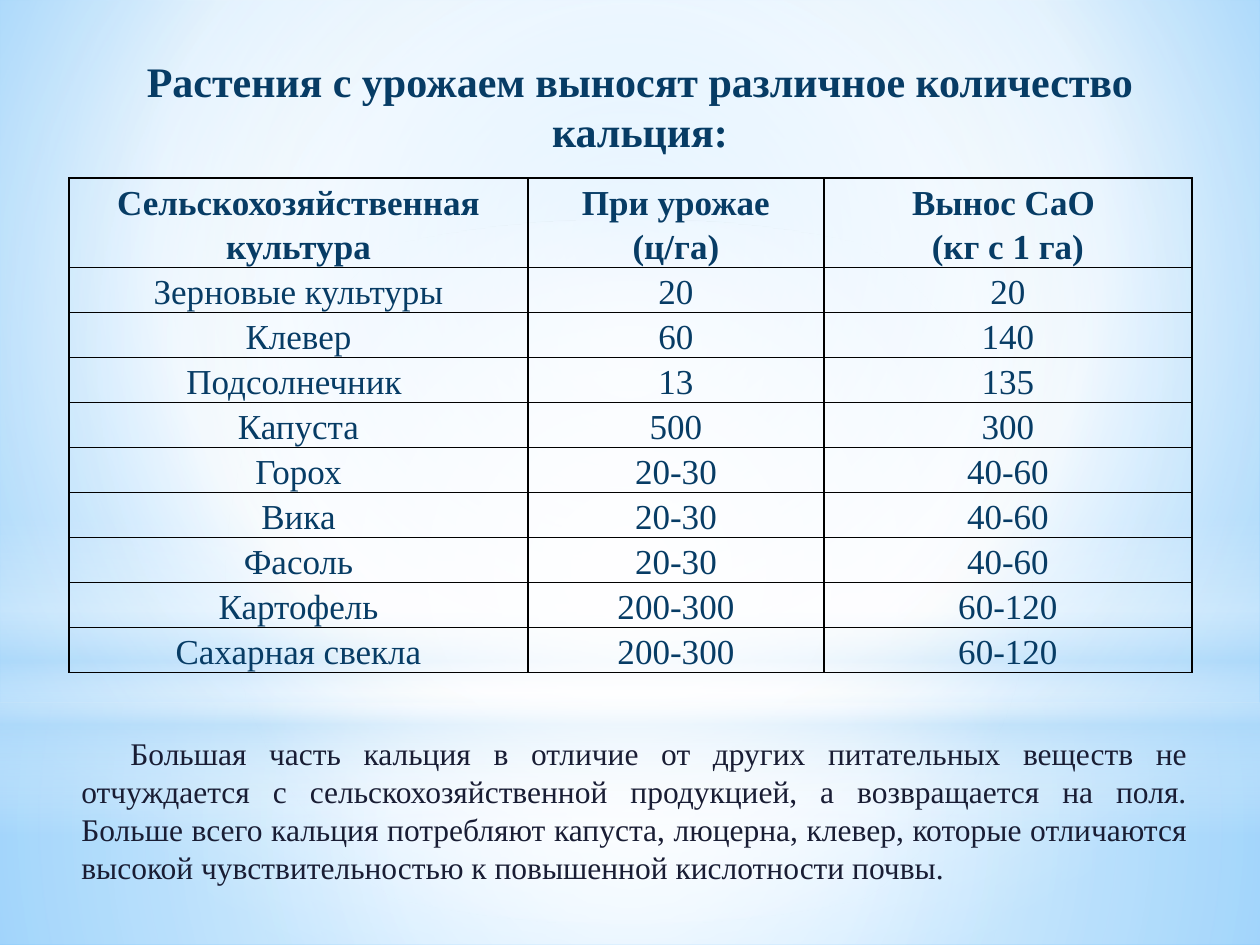
"""Build a slide on how much calcium different crops remove from the soil."""
from dataclasses import dataclass

from lxml import etree
from pptx import Presentation
from pptx import util as u
from pptx.dml.color import RGBColor
from pptx.enum import shapes, text
from pptx.oxml import parse_xml
from pptx.oxml.ns import nsdecls, qn

SCALE = 914400 / 126
FONT = "Times New Roman"
NAVY = RGBColor(0x07, 0x3C, 0x65)
INK = RGBColor(0x19, 0x1D, 0x34)
BLACK = RGBColor(0, 0, 0)
WHITE = RGBColor(255, 255, 255)
PALE = RGBColor(0xB4, 0xDC, 0xFA)
SKY = RGBColor(0x9E, 0xD5, 0xFF)
BLUE = RGBColor(0x5B, 0xB9, 0xFF)

Stop = tuple[int, RGBColor, int]
CENTRE = (50, 50, 50, 50)


@dataclass
class Wash:
    kind: shapes.MSO_SHAPE
    box: tuple[int, int, int, int]
    stops: list[Stop]
    focus: tuple[int, int, int, int] | None = CENTRE


RECT, OVAL = shapes.MSO_SHAPE.RECTANGLE, shapes.MSO_SHAPE.OVAL
SKY_STOPS = [(0, SKY, 100), (60, WHITE, 100), (100, BLUE, 100)]
WASHES = [
    Wash(RECT, (0, 703, 1260, 242),
         [(0, WHITE, 91), (37, WHITE, 76), (100, PALE, 79)]),
    Wash(RECT, (0, 0, 1260, 703),
         [(0, WHITE, 89), (48, WHITE, 62), (100, PALE, 79)]),
    Wash(RECT, (0, 519, 1260, 315),
         [(0, WHITE, 0), (29, WHITE, 30), (45, PALE, 40),
          (55, WHITE, 26), (65, PALE, 60), (100, WHITE, 0)], None),
    Wash(OVAL, (0, 220, 1260, 703), [(0, WHITE, 100), (56, WHITE, 0)]),
]

TITLE = "Растения с урожаем выносят различное количество кальция:"
NOTE = (
    "Большая часть кальция в отличие от других питательных веществ не "
    "отчуждается с сельскохозяйственной продукцией, а возвращается на поля. "
    "Больше всего кальция потребляют капуста, люцерна, клевер, которые "
    "отличаются высокой чувствительностью к повышенной кислотности почвы."
)
COLS = (459, 296, 368)
ROW = 45
CROPS = [
    ("Сельскохозяйственная культура", "При урожае (ц/га)",
     "Вынос CaO \n(кг с 1 га)"),
    ("Зерновые культуры", "20", "20"),
    ("Клевер", "60", "140"),
    ("Подсолнечник ", "13", "135"),
    ("Капуста", "500", "300"),
    ("Горох", "20-30", "40-60"),
    ("Вика", "20-30", "40-60"),
    ("Фасоль", "20-30", "40-60"),
    ("Картофель", "200-300", "60-120"),
    ("Сахарная свекла", "200-300", "60-120"),
]


def px(n: int) -> u.Emu:
    """Turn pixels into EMU."""
    return u.Emu(round(n * SCALE))


def blend(fill, root, stops: list[Stop], focus) -> None:
    """Give a fill a radial gradient, or a vertical one without focus."""
    fill.gradient()
    old = root.find(".//" + qn("a:gradFill"))
    marks = "".join(
        f'<a:gs pos="{pos * 1000}"><a:srgbClr val="{tone}">'
        f'<a:alpha val="{alpha * 1000}"/></a:srgbClr></a:gs>'
        for pos, tone, alpha in stops)
    way = '<a:lin ang="5400000" scaled="0"/>'
    if focus:
        sides = " ".join(f'{s}="{v * 1000}"' for s, v in zip("ltrb", focus))
        way = f'<a:path path="circle"><a:fillToRect {sides}/></a:path>'
    new = parse_xml(f'<a:gradFill {nsdecls("a")} rotWithShape="1">'
                    f'<a:gsLst>{marks}</a:gsLst>{way}</a:gradFill>')
    old.getparent().replace(old, new)


def paint(slide, wash: Wash) -> None:
    """Draw one soft layer of the backdrop."""
    shape = slide.shapes.add_shape(wash.kind, *map(px, wash.box))
    shape.shadow.inherit = False
    shape.line.fill.background()
    blend(shape.fill, shape.element, wash.stops, wash.focus)


def write(frame, words: str, size: int, tone: RGBColor, align,
          bold: bool = False) -> None:
    """Set the text of a frame and format its runs."""
    frame.text = words
    for para in frame.paragraphs:
        para.alignment = align
        for run in para.runs:
            font = run.font
            font.name, font.size, font.bold = FONT, u.Pt(size), bold
            font.color.rgb = tone


def edge(cell) -> None:
    """Draw thin black borders round a cell."""
    props = cell._tc.get_or_add_tcPr()
    for spot, side in enumerate("LRTB"):
        line = etree.Element(qn(f"a:ln{side}"), w=str(u.Pt(1)))
        solid = etree.SubElement(line, qn("a:solidFill"))
        etree.SubElement(solid, qn("a:srgbClr"), val=str(BLACK))
        props.insert(spot, line)


def chart_crops(slide) -> None:
    """Add the table of crops."""
    table = slide.shapes.add_table(
        len(CROPS), len(COLS), px(69), px(178), px(sum(COLS)),
        px(ROW * len(CROPS))).table
    table.first_row = table.horz_banding = False
    for col, wide in zip(table.columns, COLS):
        col.width = px(wide)
    for i, crop in enumerate(CROPS):
        table.rows[i].height = px(ROW)
        for j, words in enumerate(crop):
            cell = table.cell(i, j)
            cell.margin_left = cell.margin_right = px(9)
            cell.margin_top = cell.margin_bottom = 0
            cell.fill.background()
            write(cell.text_frame, words, 20, NAVY, text.PP_ALIGN.CENTER,
                  bold=i == 0)
            for para in cell.text_frame.paragraphs:
                para.line_spacing = 1.15
            edge(cell)


def head(slide) -> None:
    """Place the title above the backdrop."""
    title = slide.shapes.title
    title.left, title.top, title.width, title.height = map(
        px, (69, 49, 1142, 115))
    frame = title.text_frame
    frame.vertical_anchor = text.MSO_ANCHOR.TOP
    frame.auto_size = text.MSO_AUTO_SIZE.SHAPE_TO_FIT_TEXT
    write(frame, TITLE, 24, NAVY, text.PP_ALIGN.CENTER, bold=True)
    title.element.getparent().append(title.element)


def foot(slide) -> None:
    """Add the closing paragraph."""
    box = slide.shapes.add_textbox(*map(px, (69, 728, 1131, 165)))
    frame = box.text_frame
    frame.word_wrap = True
    frame.auto_size = text.MSO_AUTO_SIZE.SHAPE_TO_FIT_TEXT
    write(frame, NOTE, 18, INK, text.PP_ALIGN.JUSTIFY)
    frame.paragraphs[0]._p.get_or_add_pPr().set("indent", str(px(49)))


def main() -> None:
    """Build and save the slide."""
    deck = Presentation()
    deck.slide_width, deck.slide_height = px(1260), px(945)
    slide = deck.slides.add_slide(deck.slide_layouts[5])
    blend(slide.background.fill, slide.element, SKY_STOPS, (20, 10, 20, 60))
    for wash in WASHES:
        paint(slide, wash)
    chart_crops(slide)
    head(slide)
    foot(slide)
    deck.save("out.pptx")


if __name__ == "__main__":
    main()
